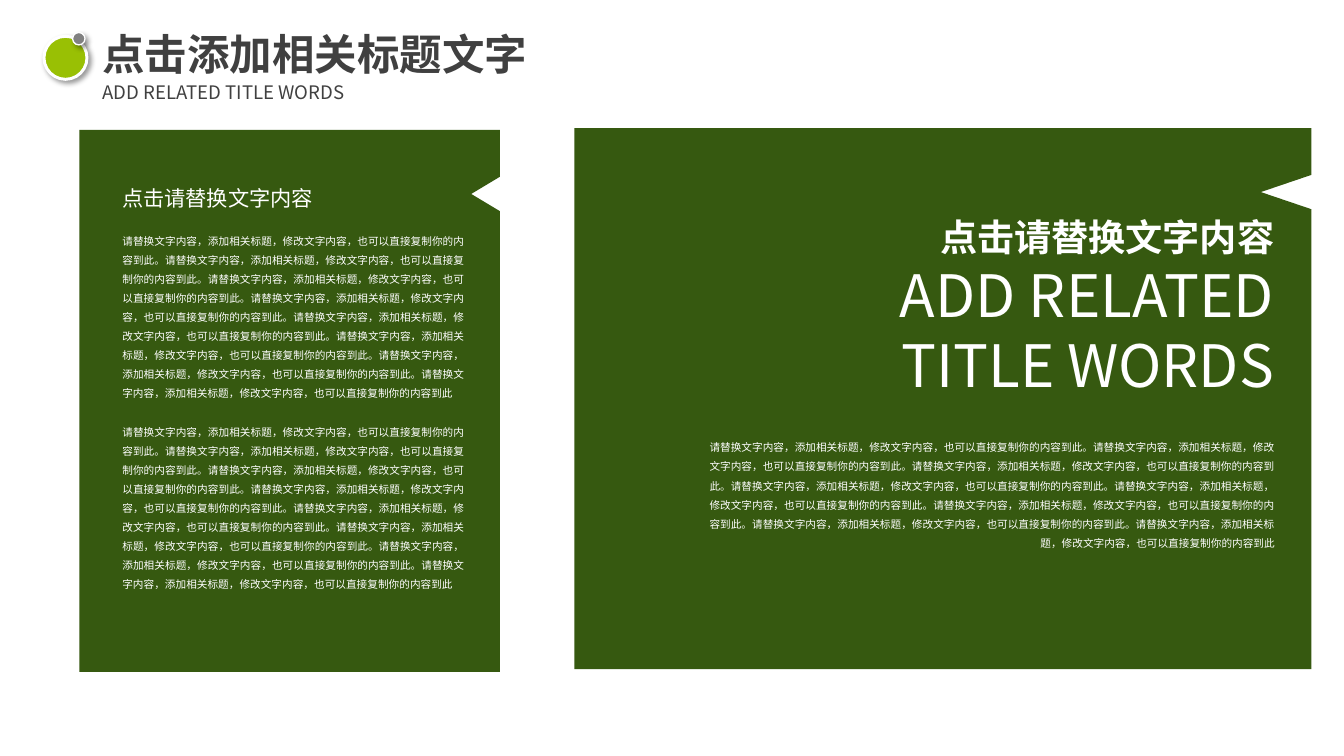
import pptx
import pptx.util
import pptx.dml.color
import pptx.enum.shapes
import pptx.enum.text
import pptx.oxml
import pptx.oxml.ns
import lxml.etree

Inches = pptx.util.Inches
Pt = pptx.util.Pt
ALIGN = pptx.enum.text.PP_ALIGN
FONT = "Noto Sans CJK SC"
GREEN, WHITE, DARK = "365910", "FFFFFF", "404040"
HEADING = "点击请替换文字内容"
ENGLISH = "ADD RELATED TITLE WORDS"
BODY = "。".join(["请替换文字内容，添加相关标题，修改文字内容，也可以直接复制你的内容到此"] * 8)


def color(value):
    return pptx.dml.color.RGBColor.from_string(value)


def add_panel(slide, left, top, width, height, notch_depth):
    right, bottom = left + width, top + height
    notch_top, notch_half = top + 0.49, 0.18
    outline = [
        (right, top),
        (right, notch_top),
        (right - notch_depth, notch_top + notch_half),
        (right, notch_top + 2 * notch_half),
        (right, bottom),
        (left, bottom),
    ]
    builder = slide.shapes.build_freeform(Inches(left), Inches(top))
    builder.add_line_segments([(Inches(x), Inches(y)) for x, y in outline], close=True)
    panel = builder.convert_to_shape()
    panel.shadow.inherit = False
    panel.fill.solid()
    panel.fill.fore_color.rgb = color(GREEN)
    panel.line.fill.background()


def add_text(slide, box, lines, ink, align=ALIGN.LEFT, spacing=None, gap=0, wrap=True):
    frame = slide.shapes.add_textbox(*map(Inches, box)).text_frame
    frame.word_wrap = wrap
    frame.margin_left = frame.margin_top = frame.margin_right = frame.margin_bottom = 0
    for index, (text, size, bold) in enumerate(lines):
        paragraph = frame.paragraphs[0] if index == 0 else frame.add_paragraph()
        paragraph.text = text
        paragraph.alignment = align
        if spacing:
            paragraph.line_spacing = spacing
        if index < len(lines) - 1:
            paragraph.space_after = Pt(gap)
        font = paragraph.font
        font.name, font.size, font.bold = FONT, Pt(size), bold
        font.color.rgb = color(ink)
        properties = paragraph._p.pPr.find(pptx.oxml.ns.qn("a:defRPr"))
        lxml.etree.SubElement(properties, pptx.oxml.ns.qn("a:ea"), typeface=FONT)


def add_dot(slide, left, top, size, fill, border):
    dot = slide.shapes.add_shape(
        pptx.enum.shapes.MSO_SHAPE.OVAL, *map(Inches, (left, top, size, size)))
    dot.fill.solid()
    dot.fill.fore_color.rgb = color(fill)
    dot.line.color.rgb = color(WHITE)
    dot.line.width = Pt(border)
    dot._element.spPr.append(pptx.oxml.parse_xml(
        f'<a:effectLst {pptx.oxml.ns.nsdecls("a")}>'
        f'<a:outerShdw blurRad="{Pt(4)}" dist="{Pt(3)}" dir="2700000" algn="tl" rotWithShape="0">'
        '<a:srgbClr val="000000"><a:alpha val="40000"/></a:srgbClr>'
        '</a:outerShdw></a:effectLst>'))


def main():
    deck = pptx.Presentation()
    deck.slide_width, deck.slide_height = Inches(14.06), Inches(7.91)
    slide = deck.slides.add_slide(deck.slide_layouts[6])

    add_panel(slide, 0.83, 1.36, 4.4, 5.67, 0.3)
    add_text(slide, (1.28, 2.39, 3.58, 3.84), [(BODY, 8, False)] * 2, WHITE,
             ALIGN.JUSTIFY, spacing=1.5, gap=14.4)
    add_text(slide, (1.28, 1.94, 2.02, 0.27), [(HEADING, 16, False)], WHITE,
             ALIGN.JUSTIFY, wrap=False)

    add_panel(slide, 6.01, 1.34, 7.71, 5.66, 0.53)
    add_text(slide, (8.76, 2.24, 4.57, 1.95), [(HEADING, 28, True), (ENGLISH, 44, False)],
             WHITE, ALIGN.RIGHT)
    add_text(slide, (7.35, 4.55, 5.99, 1.21), [(BODY, 8, False)], WHITE,
             ALIGN.RIGHT, spacing=1.5)

    add_text(slide, (1.07, 0.29, 6.01, 0.54), [("点击添加相关标题文字", 32, True)], DARK)
    add_text(slide, (1.07, 0.85, 3.63, 0.24), [(ENGLISH, 14, False)], DARK)
    add_dot(slide, 0.46, 0.38, 0.45, "99C004", 2.25)
    add_dot(slide, 0.76, 0.34, 0.13, "808080", 1)

    deck.save("out.pptx")


if __name__ == "__main__":
    main()
